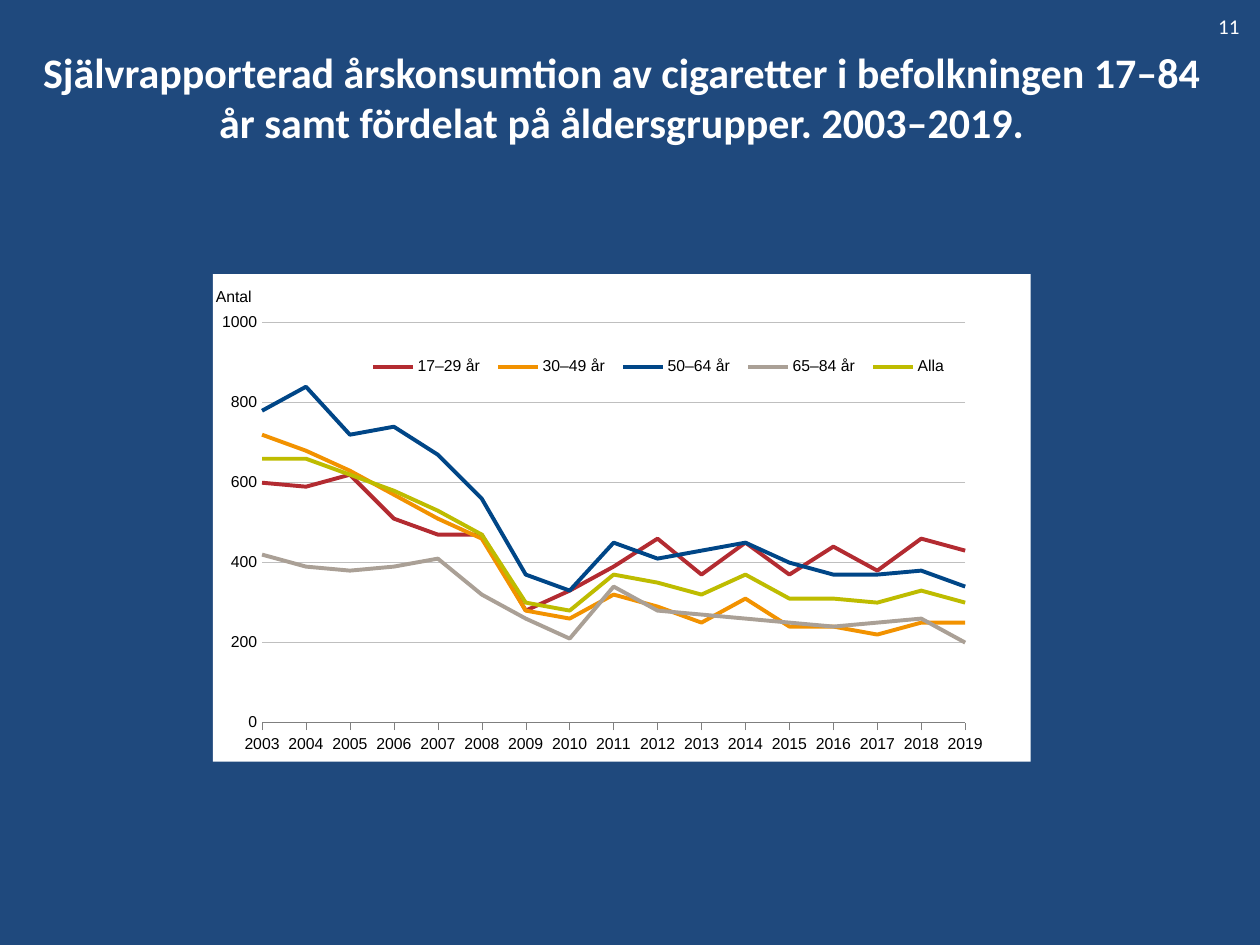
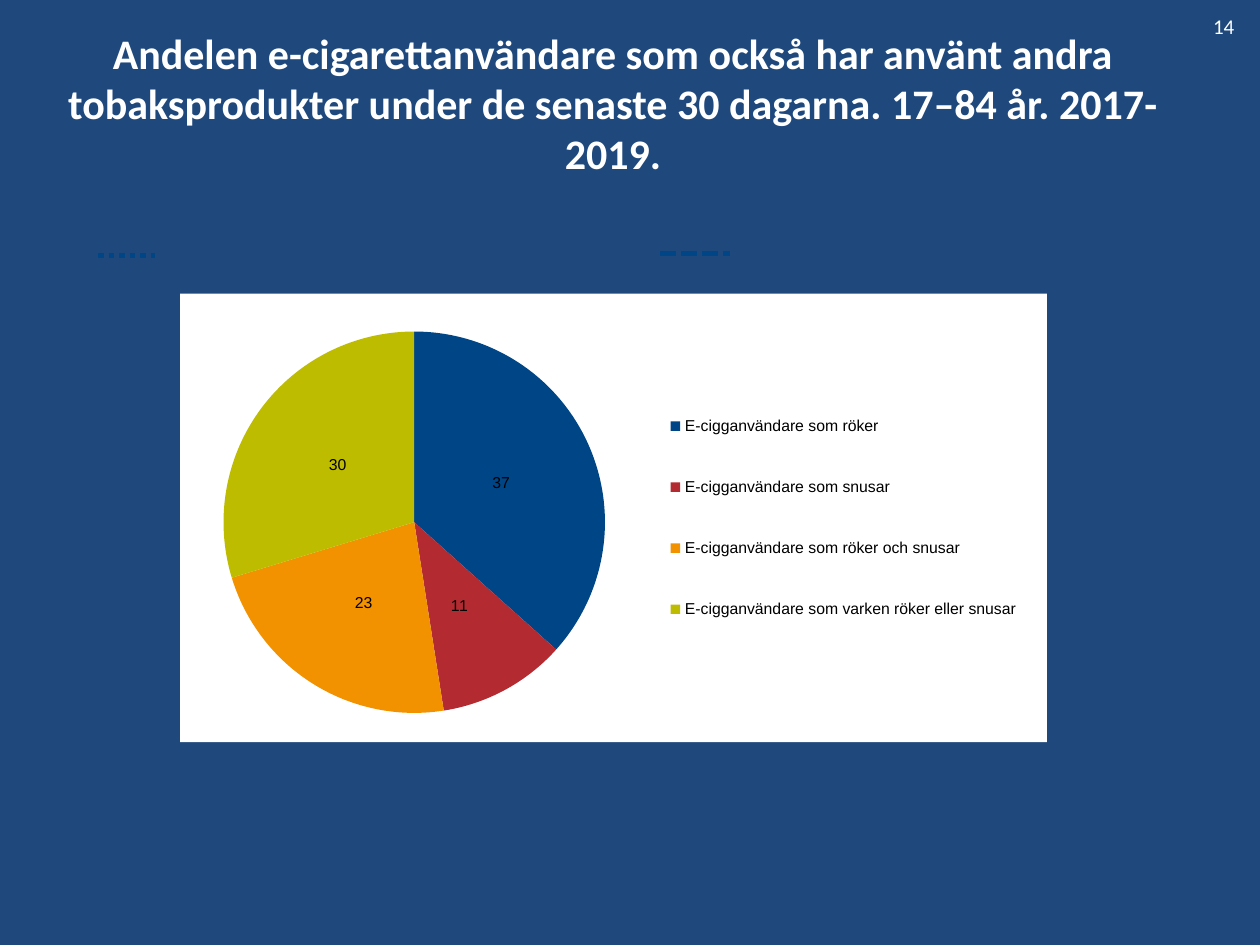
from dataclasses import dataclass
from lxml.etree import SubElement, Element
from pptx import Presentation
from pptx.chart.data import CategoryChartData
from pptx.dml.color import RGBColor
from pptx.enum.chart import XL_CHART_TYPE, XL_LABEL_POSITION, XL_LEGEND_POSITION, XL_TICK_MARK
from pptx.enum.dml import MSO_LINE
from pptx.enum.shapes import MSO_CONNECTOR
from pptx.enum.text import MSO_ANCHOR, PP_ALIGN
from pptx.oxml.ns import qn
from pptx.util import Inches, Pt


@dataclass(frozen=True)
class Theme:
    background: str = "1F497D"
    white: str = "FFFFFF"
    black: str = "000000"
    axis: str = "7F7F7F"
    grid: str = "BFBFBF"
    blue: str = "004687"
    red: str = "B32B31"
    orange: str = "F29200"
    grey: str = "AAA096"
    lime: str = "BEBC00"
    text_font: str = "Calibri"
    chart_font: str = "Arial"
    title_size: int = 24
    number_size: int = 12
    chart_size: int = 9


T = Theme()
COLS, ROWS = 100, 75
CELL = Inches(0.1)

CONSUMPTION = {
    "title": "Självrapporterad årskonsumtion av cigaretter i befolkningen 17–84 år "
             "samt fördelat på åldersgrupper. 2003–2019.",
    "title_box": (2.3, 1.4, 94.1, 12.5),
    "number": "11",
    "number_box": (95.7, 0.6, 4.3, 3),
    "chart_box": (16.9, 21.75, 64.9, 38.7),
    "plot": (0.06, 0.1, 0.86, 0.82),
    "legend": (0.18, 0.16, 0.73, 0.06),
    "axis_title": "Antal",
    "axis_title_at": (0.0, 0.02),
    "years": [str(year) for year in range(2003, 2020)],
    "series": [
        ("17–29 år", T.red, [600, 590, 620, 510, 470, 470, 280, 330, 390,
                             460, 370, 450, 370, 440, 380, 460, 430]),
        ("30–49 år", T.orange, [720, 680, 630, 570, 510, 460, 280, 260, 320,
                                290, 250, 310, 240, 240, 220, 250, 250]),
        ("50–64 år", T.blue, [780, 840, 720, 740, 670, 560, 370, 330, 450,
                              410, 430, 450, 400, 370, 370, 380, 340]),
        ("65–84 år", T.grey, [420, 390, 380, 390, 410, 320, 260, 210, 340,
                              280, 270, 260, 250, 240, 250, 260, 200]),
        ("Alla", T.lime, [660, 660, 620, 580, 530, 470, 300, 280, 370,
                          350, 320, 370, 310, 310, 300, 330, 300]),
    ],
}

E_CIGARETTES = {
    "title": "Andelen e-cigarettanvändare som också har använt andra tobaksprodukter "
             "under de senaste 30 dagarna. 17–84 år. 2017-2019.",
    "title_box": (2.3, 3, 92.7, 10.3),
    "number": "14",
    "number_box": (95.3, 0.6, 4.7, 3),
    "chart_box": (14.3, 23.3, 68.8, 35.6),
    "plot": (0.05, 0.06, 0.44, 0.9),
    "legend": (0.55, 0.18, 0.43, 0.64),
    "dashes": [(7.8, 12.3, 20.3, MSO_LINE.ROUND_DOT), (52.4, 57.9, 20.1, MSO_LINE.SQUARE_DOT)],
    "slices": [
        ("E-cigganvändare som röker", T.blue, 37),
        ("E-cigganvändare som snusar", T.red, 11),
        ("E-cigganvändare som röker och snusar", T.orange, 23),
        ("E-cigganvändare som varken röker eller snusar", T.lime, 30),
    ],
}


def rgb(color):
    return RGBColor.from_string(color)


def grid(*cells):
    return [round(n * CELL) for n in cells]


def set_font(font, size=T.chart_size, color=T.black, name=T.chart_font, bold=False):
    font.size, font.name, font.bold = Pt(size), name, bold
    font.color.rgb = rgb(color)


def add_text(s, text, box, size, bold=False, align=PP_ALIGN.LEFT, anchor=MSO_ANCHOR.TOP, wrap=True):
    tf = s.shapes.add_textbox(*grid(*box)).text_frame
    tf.word_wrap, tf.vertical_anchor = wrap, anchor
    p = tf.paragraphs[0]
    p.alignment = align
    r = p.add_run()
    r.text = text
    set_font(r.font, size, T.white, T.text_font, bold)


def add_base(prs, content):
    s = prs.slides.add_slide(prs.slide_layouts[6])
    s.background.fill.solid()
    s.background.fill.fore_color.rgb = rgb(T.background)
    add_text(s, content["title"], content["title_box"], T.title_size, bold=True,
             align=PP_ALIGN.CENTER, anchor=MSO_ANCHOR.MIDDLE)
    add_text(s, content["number"], content["number_box"], T.number_size)
    return s


def place(parent, shares, after=None, inner=False):
    for old in parent.findall(qn("c:layout")):
        parent.remove(old)
    layout = Element(qn("c:layout"))
    manual = SubElement(layout, qn("c:manualLayout"))
    values = [("layoutTarget", "inner")] if inner else []
    values += [("xMode", "edge"), ("yMode", "edge"), *zip("xywh", shares)]
    for tag, value in values:
        SubElement(manual, qn(f"c:{tag}")).set("val", str(value))
    if after:
        parent.find(qn(after)).addnext(layout)
    else:
        parent.insert(0, layout)


def add_chart(s, kind, data, content, legend_position):
    chart = s.shapes.add_chart(kind, *grid(*content["chart_box"]), data).chart
    chart.has_title = False
    set_font(chart.font)
    chart.has_legend = True
    chart.legend.position = legend_position
    chart.legend.include_in_layout = False
    set_font(chart.legend.font)
    place(chart.legend._element, content["legend"], after="c:legendPos")

    root = chart._chartSpace
    place(root.find(".//" + qn("c:plotArea")), content["plot"], inner=True)
    sp_pr = Element(qn("c:spPr"))
    fill = SubElement(sp_pr, qn("a:solidFill"))
    SubElement(fill, qn("a:srgbClr")).set("val", T.white)
    SubElement(SubElement(sp_pr, qn("a:ln")), qn("a:noFill"))
    root.find(qn("c:chart")).addnext(sp_pr)
    return chart


def style_line(line, color, width):
    line.color.rgb = rgb(color)
    line.width = Pt(width)


def build_consumption(prs):
    content = CONSUMPTION
    s = add_base(prs, content)
    data = CategoryChartData(number_format="0")
    data.categories = content["years"]
    for name, _, values in content["series"]:
        data.add_series(name, values)
    chart = add_chart(s, XL_CHART_TYPE.LINE, data, content, XL_LEGEND_POSITION.BOTTOM)
    for series, (_, color, _) in zip(chart.plots[0].series, content["series"]):
        series.smooth = False
        style_line(series.format.line, color, 2.25)

    years, amounts = chart.category_axis, chart.value_axis
    years.major_tick_mark = XL_TICK_MARK.OUTSIDE
    style_line(years.format.line, T.axis, 0.25)
    amounts.minimum_scale, amounts.maximum_scale, amounts.major_unit = 0, 1000, 200
    amounts.major_tick_mark = XL_TICK_MARK.NONE
    amounts.tick_labels.number_format = "0"
    amounts.tick_labels.number_format_is_linked = False
    amounts.format.line.fill.background()
    style_line(amounts.major_gridlines.format.line, T.grid, 0.75)
    for axis in (years, amounts):
        set_font(axis.tick_labels.font)
    crossing = Element(qn("c:crossBetween"), val="midCat")
    amounts._element.find(qn("c:majorUnit")).addprevious(crossing)

    title = amounts.axis_title
    tf = title.text_frame
    tf.text = content["axis_title"]
    set_font(tf.paragraphs[0].runs[0].font)
    tf._txBody.find(qn("a:bodyPr")).set("rot", "0")
    place(title._element, content["axis_title_at"], after="c:tx")


def build_e_cigarettes(prs):
    content = E_CIGARETTES
    s = add_base(prs, content)
    for left, right, row, dash in content["dashes"]:
        sp = s.shapes.add_connector(MSO_CONNECTOR.STRAIGHT, *grid(left, row, right, row))
        style_line(sp.line, T.blue, 3)
        sp.line.dash_style = dash
        SubElement(sp._element.spPr, qn("a:effectLst"))

    names, colors, values = zip(*content["slices"])
    data = CategoryChartData(number_format="0")
    data.categories = names
    data.add_series("Series 1", values)
    chart = add_chart(s, XL_CHART_TYPE.PIE, data, content, XL_LEGEND_POSITION.RIGHT)
    plot = chart.plots[0]
    plot.vary_by_categories = True
    for i, color in enumerate(colors):
        fill = plot.series[0].points[i].format.fill
        fill.solid()
        fill.fore_color.rgb = rgb(color)
    labels = plot.series[0].data_labels
    labels.show_value = True
    labels.number_format, labels.number_format_is_linked = "#,##0", False
    labels.position = XL_LABEL_POSITION.CENTER
    set_font(labels.font)


def main():
    prs = Presentation()
    prs.slide_width, prs.slide_height = grid(COLS, ROWS)
    build_consumption(prs)
    build_e_cigarettes(prs)
    prs.save("out.pptx")


if __name__ == "__main__":
    main()
